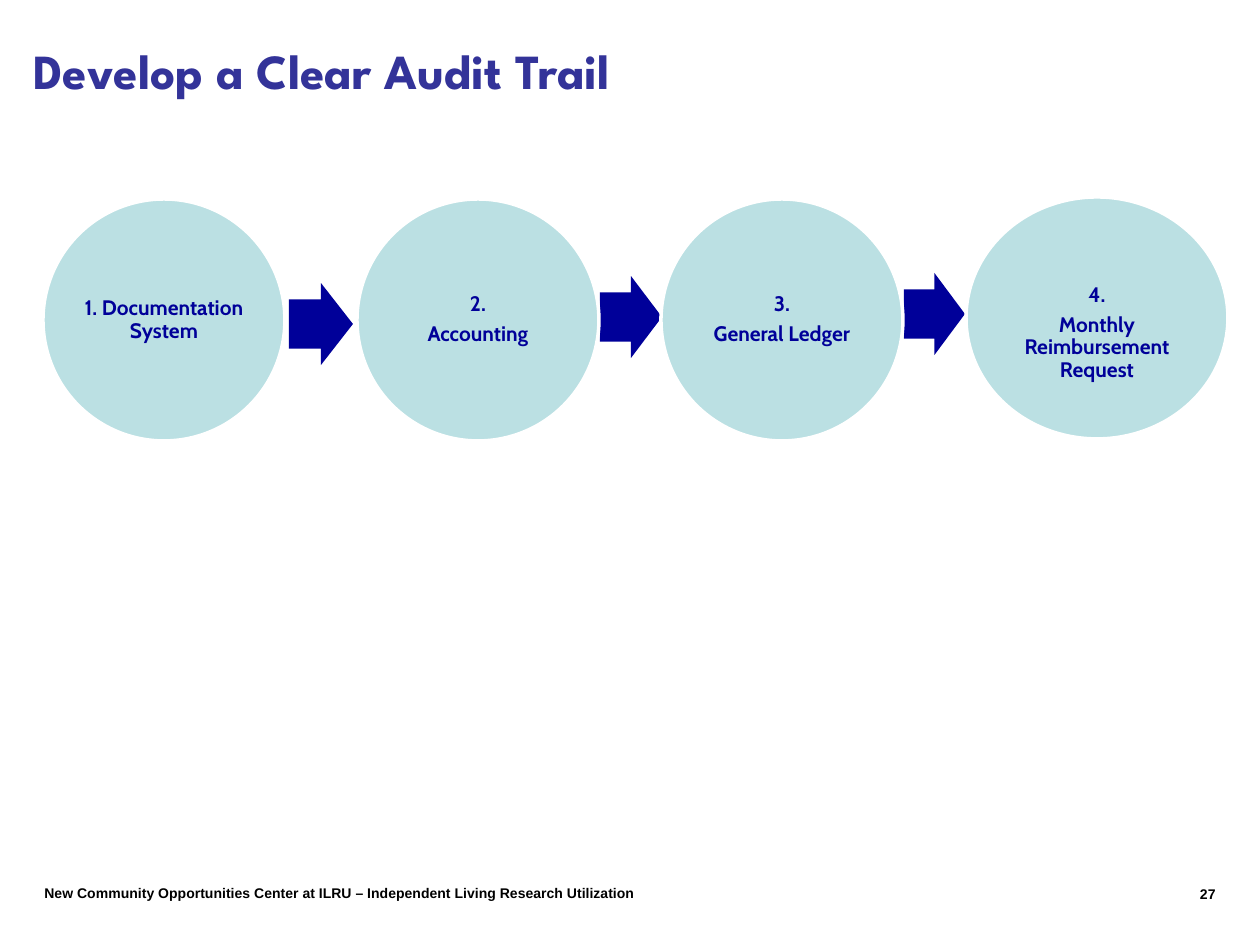
from pptx import Presentation
from pptx.dml.color import RGBColor
from pptx.enum.shapes import MSO_SHAPE
from pptx.enum.text import MSO_ANCHOR, PP_ALIGN
from pptx.util import Pt

OVAL, ARROW = MSO_SHAPE.OVAL, MSO_SHAPE.RIGHT_ARROW
LEFT, CENTER, RIGHT = PP_ALIGN.LEFT, PP_ALIGN.CENTER, PP_ALIGN.RIGHT
TOP, MIDDLE = MSO_ANCHOR.TOP, MSO_ANCHOR.MIDDLE

PX = 914400 // 126
COLORS = {"title": "333399", "navy": "000099", "circle": "BBE0E3",
          "white": "FFFFFF", "black": "000000"}

# Content
TITLE = "Develop a Clear Audit Trail"
FOOTER = "New Community Opportunities Center at ILRU – Independent Living Research Utilization"
PAGE = "27"
# Step lines, then left, top, width of the circle and its top inset
STEPS = [
    (["1. Documentation System"], 43, 199, 242, 2),
    (["2.", "Accounting"], 357, 199, 242, 2),
    (["3.", "General Ledger"], 661, 199, 242, 2),
    (["4.", "Monthly Reimbursement Request"], 966, 197, 262, 32),
]
# Left, top, width of each arrow
ARROWS = [(289, 283, 64), (600, 276, 62), (904, 273, 61)]
CIRCLE_H, ARROW_H = 242, 82

# Text formats
TITLE_FONT = {"name": "League Spartan", "size": Pt(28), "bold": True}
STEP_FONT = {"name": "Cabin", "size": Pt(12), "bold": True}
FOOTER_FONT = {"name": "Arial", "size": Pt(8), "bold": True}
STEP_SPACING = {"line_spacing": 0.9, "space_after": Pt(4.2)}


def px(*lengths):
    return [length * PX for length in lengths]


def color(key):
    return RGBColor.from_string(COLORS[key])


def write(frame, lines, font, font_color, align, anchor, spacing=None):
    frame.word_wrap = True
    frame.vertical_anchor = anchor
    for i, line in enumerate(lines):
        paragraph = frame.paragraphs[0] if i == 0 else frame.add_paragraph()
        paragraph.text = line
        paragraph.alignment = align
        for key, value in (spacing or {}).items():
            setattr(paragraph, key, value)
        for key, value in font.items():
            setattr(paragraph.font, key, value)
        paragraph.font.color.rgb = color(font_color)


def add_filled(kind, box, fill):
    shape = slide.shapes.add_shape(kind, *px(*box))
    shape.shadow.inherit = False
    shape.fill.solid()
    shape.fill.fore_color.rgb = color(fill)
    shape.line.fill.background()
    return shape


prs = Presentation()
prs.slide_width, prs.slide_height = px(1260, 945)
slide = prs.slides.add_slide(prs.slide_layouts[5])

# Title
title = slide.shapes.title
title.left, title.top, title.width, title.height = px(21, 21, 1207, 98)
write(title.text_frame, [TITLE], TITLE_FONT, "title", LEFT, MIDDLE)

# Arrows between the steps
for left, top, width in ARROWS:
    arrow = add_filled(ARROW, (left, top, width, ARROW_H), "navy")
    arrow.adjustments[0] = 0.6
    arrow.adjustments[1] = 0.5

# Step circles
for lines, left, top, width, inset_top in STEPS:
    circle = add_filled(OVAL, (left, top, width, CIRCLE_H), "circle")
    circle.line.color.rgb = color("white")
    circle.line.width = Pt(2)
    frame = circle.text_frame
    frame.margin_left, frame.margin_top, frame.margin_right, frame.margin_bottom = px(2, inset_top, 2, 2)
    write(frame, lines, STEP_FONT, "navy", CENTER, MIDDLE, STEP_SPACING)

# Footer and page number
for text, box, align in [(FOOTER, (32, 878, 630, 29), LEFT),
                         (PAGE, (1144, 879, 84, 34), RIGHT)]:
    note = slide.shapes.add_textbox(*px(*box))
    write(note.text_frame, [text], FOOTER_FONT, "black", align, TOP)

prs.save("out.pptx")
